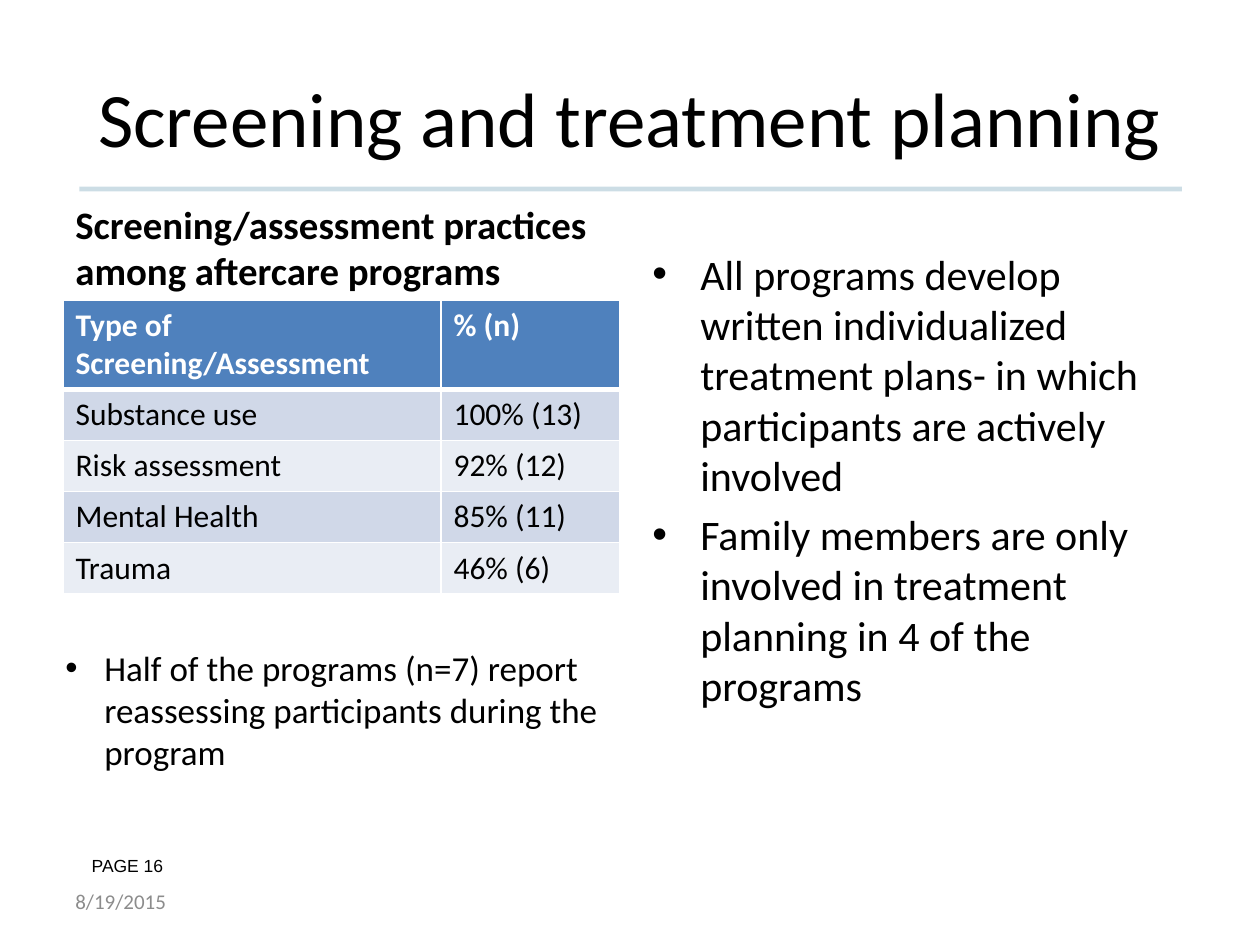
"""Build the slide on screening and treatment planning in aftercare programs."""
from dataclasses import dataclass

from lxml import etree
from pptx import Presentation
from pptx import util as u
from pptx.dml.color import RGBColor
from pptx.enum import shapes, text
from pptx.oxml.ns import qn


@dataclass(frozen=True)
class Theme:
    """Fonts, colours and type sizes of the slide."""
    body_font: str = "Calibri"
    page_font: str = "Arial"
    ink: str = "000000"
    muted: str = "8C8C8C"
    paper: str = "FFFFFF"
    rule: str = "005581"
    header: str = "4F81BD"
    bands: tuple = ("D0D8E8", "E9EDF4")
    title: float = 44
    heading: float = 22.2
    body: float = 24
    note: float = 20
    cell: float = 18
    date: float = 12
    page: float = 10


@dataclass(frozen=True)
class TextBlock:
    """A text box with its place and format."""
    box: tuple
    lines: tuple
    size: float
    color: str = "000000"
    font: str = "Calibri"
    bold: bool = False
    anchor: text.MSO_ANCHOR = text.MSO_ANCHOR.TOP
    bullet_indent: float = 0
    gap: float = 0
    wrap: bool = True


T = Theme()
BLOCKS = (
    TextBlock((0.63, 6.74, 1.06, 0.52), ("PAGE 16",), T.page, font=T.page_font, wrap=False),
    TextBlock((0.5, 1.68, 4.42, 0.7),
              ("Screening/assessment practices among aftercare programs",),
              T.heading, bold=True, anchor=text.MSO_ANCHOR.BOTTOM),
    TextBlock((5.08, 1.92, 4.42, 4.78),
              ("All programs develop written individualized treatment plans- "
               "in which participants are actively involved",
               "Family members are only involved in treatment planning in 4 of the programs"),
              T.body, bullet_indent=0.38, gap=4.8),
    TextBlock((0.5, 6.95, 2.33, 0.4), ("8/19/2015",), T.date, T.muted,
              anchor=text.MSO_ANCHOR.MIDDLE),
    TextBlock((0.42, 5.08, 4.5, 1.11),
              ("Half of the programs (n=7) report reassessing participants during the program",),
              T.note, bullet_indent=0.31),
)
ROWS = (
    ("Type of Screening/Assessment", "% (n)"),
    ("Substance use", "100% (13)"),
    ("Risk assessment", "92% (12)"),
    ("Mental Health", "85% (11)"),
    ("Trauma", "46% (6)"),
)
COLUMN_WIDTHS = (3, 1.42)
HEADER_HEIGHT, ROW_HEIGHT = 0.7, 0.405


def inches(values: tuple) -> list:
    """Turn numbers into lengths."""
    return [u.Inches(v) for v in values]


def format_runs(p, size: float, color: str, font: str = T.body_font, bold: bool = False) -> None:
    """Give every run of a paragraph its font."""
    for r in p.runs:
        r.font.name = font
        r.font.size = u.Pt(size)
        r.font.bold = bold
        r.font.color.rgb = RGBColor.from_string(color)


def add_bullet(p, indent: float) -> None:
    """Hang a round bullet before a paragraph."""
    props = p._p.get_or_add_pPr()
    props.set("marL", str(u.Inches(indent)))
    props.set("indent", str(-u.Inches(indent)))
    etree.SubElement(props, qn("a:buFont")).set("typeface", "Arial")
    etree.SubElement(props, qn("a:buChar")).set("char", "•")


def add_text(s, block: TextBlock) -> None:
    """Draw one text block."""
    tf = s.shapes.add_textbox(*inches(block.box)).text_frame
    tf.word_wrap = block.wrap
    tf.vertical_anchor = block.anchor
    tf.text = "\n".join(block.lines)
    for i, p in enumerate(tf.paragraphs):
        if block.bullet_indent:
            add_bullet(p, block.bullet_indent)
        if i and block.gap:
            p.space_before = u.Pt(block.gap)
        format_runs(p, block.size, block.color, block.font, block.bold)


def add_title(s, title: str) -> None:
    """Place and format the title placeholder."""
    sp = s.shapes.title
    sp.left, sp.top, sp.width, sp.height = inches((0.5, 0.3, 9, 1.25))
    tf = sp.text_frame
    tf.text = title
    tf.word_wrap = True
    tf.vertical_anchor = text.MSO_ANCHOR.MIDDLE
    p = tf.paragraphs[0]
    p.alignment = text.PP_ALIGN.CENTER
    format_runs(p, T.title, T.ink)


def add_rule(s) -> None:
    """Draw the pale rule under the title."""
    line = s.shapes.add_connector(shapes.MSO_CONNECTOR.STRAIGHT, *inches((0.63, 1.5, 9.38, 1.5)))
    line.line.width = u.Pt(2.75)
    line.line.color.rgb = RGBColor.from_string(T.rule)
    color = line.line._ln.find(".//" + qn("a:srgbClr"))
    etree.SubElement(color, qn("a:alpha")).set("val", "20000")
    etree.SubElement(line._element.spPr, qn("a:effectLst"))


def set_borders(cell, top: float, bottom: float) -> None:
    """Give a cell white borders, one point wide at the sides."""
    props = cell._tc.get_or_add_tcPr()
    widths = {"lnL": 1, "lnR": 1, "lnT": top, "lnB": bottom}
    for i, (side, width) in enumerate(widths.items()):
        ln = etree.Element(qn(f"a:{side}"), w=str(u.Pt(width)))
        fill = etree.SubElement(ln, qn("a:solidFill"))
        etree.SubElement(fill, qn("a:srgbClr")).set("val", T.paper)
        props.insert(i, ln)


def add_table(s) -> None:
    """Draw the table of screening practices."""
    height = HEADER_HEIGHT + ROW_HEIGHT * (len(ROWS) - 1)
    box = inches((0.5, 2.38, sum(COLUMN_WIDTHS), height))
    table = s.shapes.add_table(len(ROWS), len(COLUMN_WIDTHS), *box).table
    for column, width in zip(table.columns, COLUMN_WIDTHS):
        column.width = u.Inches(width)
    for i, values in enumerate(ROWS):
        is_header = i == 0
        table.rows[i].height = u.Inches(HEADER_HEIGHT if is_header else ROW_HEIGHT)
        fill = T.header if is_header else T.bands[(i - 1) % 2]
        for j, value in enumerate(values):
            cell = table.cell(i, j)
            cell.text_frame.text = value
            cell.fill.solid()
            cell.fill.fore_color.rgb = RGBColor.from_string(fill)
            set_borders(cell, top=3 if i == 1 else 1, bottom=3 if is_header else 1)
            format_runs(cell.text_frame.paragraphs[0], T.cell,
                        T.paper if is_header else T.ink, bold=is_header)


def main() -> None:
    """Build and save the slide."""
    prs = Presentation()
    prs.slide_width, prs.slide_height = inches((10, 7.5))
    s = prs.slides.add_slide(prs.slide_layouts[5])
    add_rule(s)
    add_title(s, "Screening and treatment planning")
    add_table(s)
    for block in BLOCKS:
        add_text(s, block)
    prs.save("out.pptx")


if __name__ == "__main__":
    main()
